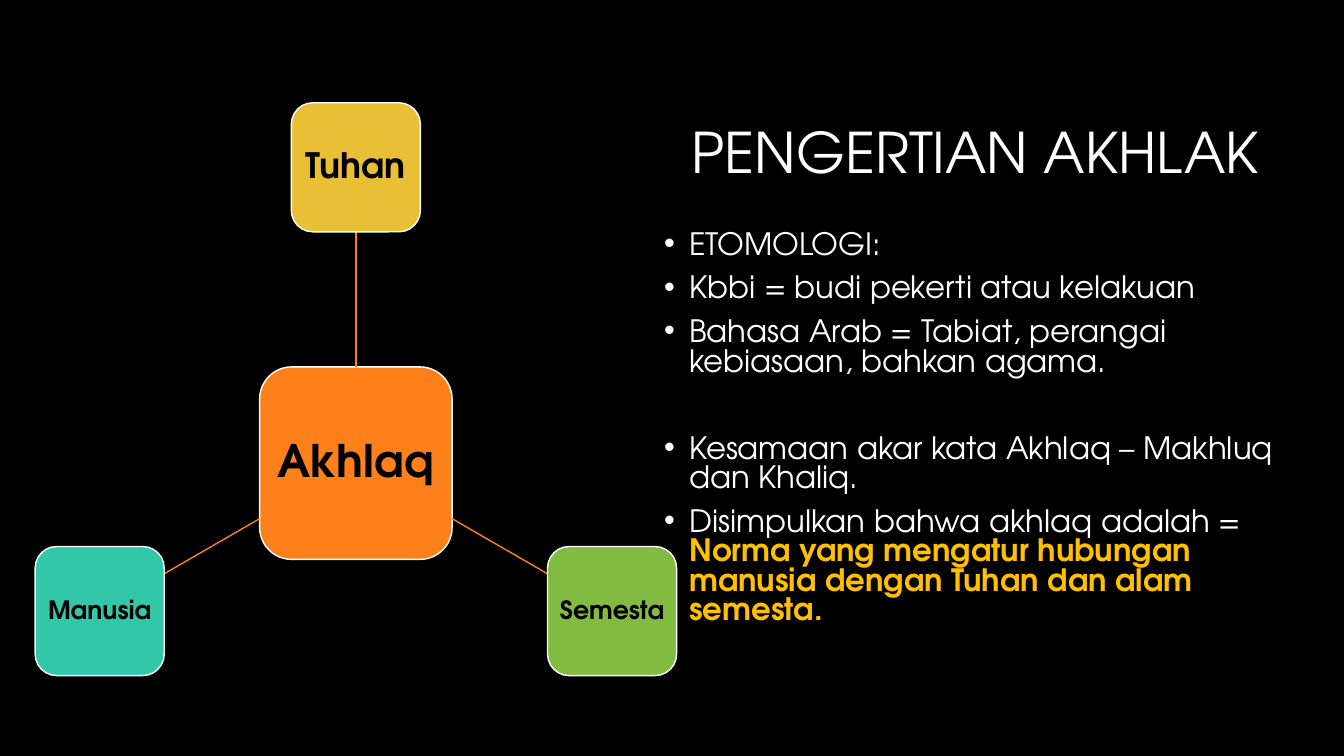
from math import cos, radians, sin

from lxml.etree import SubElement
from pptx import Presentation
from pptx.dml.color import RGBColor
from pptx.enum.shapes import MSO_CONNECTOR, MSO_SHAPE
from pptx.enum.text import MSO_ANCHOR, MSO_AUTO_SIZE, PP_ALIGN
from pptx.oxml.ns import qn
from pptx.util import Pt

BLACK = RGBColor(0x00, 0x00, 0x00)
WHITE = RGBColor(0xFF, 0xFF, 0xFF)
GOLD = RGBColor(0xFF, 0xC0, 0x00)
ORANGE = RGBColor(0xFE, 0x80, 0x1A)
YELLOW = RGBColor(0xE9, 0xBF, 0x35)
GREEN = RGBColor(0x81, 0xBB, 0x42)
TEAL = RGBColor(0x32, 0xC7, 0xA9)
FONT = "TeX Gyre Adventor"

TITLE = "PENGERTIAN AKHLAK"
POINTS = [
    ("ETOMOLOGI:", 0),
    ("Kbbi = budi pekerti atau kelakuan", 10),
    ("Bahasa Arab = Tabiat, perangai kebiasaan, bahkan agama.", 10),
    ("Kesamaan akar kata Akhlaq – Makhluq dan Khaliq.", 41),
    ("Disimpulkan bahwa akhlaq adalah =\v"
     "Norma yang mengatur hubungan manusia dengan Tuhan dan alam semesta.", 10),
]
HUB = ("Akhlaq", 32, ORANGE)
SATELLITES = [
    ("Tuhan", 25, YELLOW, -90),
    ("Semesta", 18, GREEN, 30),
    ("Manusia", 18, TEAL, 150),
]
HUB_X, HUB_Y = 254.2, 330.8
HUB_SIZE, SATELLITE_SIZE, ORBIT = 137.5, 92.2, 211.3


def style(font, size, color, bold=False):
    font.name = FONT
    font.size = Pt(size)
    font.color.rgb = color
    font.bold = bold


def add_tile(page, label, text_size, color, x, y, size):
    tile = page.shapes.add_shape(
        MSO_SHAPE.ROUNDED_RECTANGLE,
        Pt(x - size / 2), Pt(y - size / 2), Pt(size), Pt(size))
    tile.shadow.inherit = False
    tile.fill.solid()
    tile.fill.fore_color.rgb = color
    tile.line.color.rgb = WHITE
    tile.line.width = Pt(1)
    frame = tile.text_frame
    frame.word_wrap = False
    frame.margin_left = frame.margin_right = Pt(0)
    frame.vertical_anchor = MSO_ANCHOR.MIDDLE
    frame.text = label
    para = frame.paragraphs[0]
    para.alignment = PP_ALIGN.CENTER
    para.line_spacing = 0.9
    style(para.runs[0].font, text_size, BLACK, True)


def add_spoke(page, angle):
    dx, dy = cos(radians(angle)), sin(radians(angle))
    reach = 1 / max(abs(dx), abs(dy))
    start = HUB_SIZE / 2 * reach
    end = ORBIT - SATELLITE_SIZE / 2 * reach
    spoke = page.shapes.add_connector(
        MSO_CONNECTOR.STRAIGHT,
        Pt(HUB_X + start * dx), Pt(HUB_Y + start * dy),
        Pt(HUB_X + end * dx), Pt(HUB_Y + end * dy))
    spoke.line.color.rgb = ORANGE
    spoke.line.width = Pt(1)
    SubElement(spoke.element.spPr, qn("a:effectLst"))


def add_title(page):
    title = page.shapes.title
    title.left, title.top = Pt(228.2), Pt(60.5)
    title.width, title.height = Pt(678.2), Pt(101.5)
    frame = title.text_frame
    frame.text = TITLE
    frame.auto_size = MSO_AUTO_SIZE.NONE
    frame.vertical_anchor = MSO_ANCHOR.MIDDLE
    para = frame.paragraphs[0]
    para.alignment = PP_ALIGN.RIGHT
    para.line_spacing = 0.9
    style(para.runs[0].font, 40, WHITE)


def add_points(page):
    box = page.shapes.add_textbox(Pt(467.3), Pt(162), Pt(465.8), Pt(316.8))
    frame = box.text_frame
    frame.word_wrap = True
    for index, (text, space) in enumerate(POINTS):
        para = frame.add_paragraph() if index else frame.paragraphs[0]
        para.text = text
        para.line_spacing = 0.8
        para.space_before = Pt(space)
        props = para._p.get_or_add_pPr()
        props.set("marL", str(Pt(18)))
        props.set("indent", str(-Pt(18)))
        SubElement(props, qn("a:buFont"), typeface="Arial")
        SubElement(props, qn("a:buChar"), char="•")
        for span in para.runs:
            style(span.font, 22, WHITE)
    style(para.runs[-1].font, 22, GOLD, True)


def main():
    deck = Presentation()
    deck.slide_width, deck.slide_height = Pt(960), Pt(540)
    page = deck.slides.add_slide(deck.slide_layouts[5])
    page.background.fill.solid()
    page.background.fill.fore_color.rgb = BLACK
    add_title(page)
    add_points(page)
    add_tile(page, *HUB, HUB_X, HUB_Y, HUB_SIZE)
    for label, text_size, color, angle in SATELLITES:
        add_spoke(page, angle)
        x = HUB_X + ORBIT * cos(radians(angle))
        y = HUB_Y + ORBIT * sin(radians(angle))
        add_tile(page, label, text_size, color, x, y, SATELLITE_SIZE)
    deck.save("out.pptx")


if __name__ == "__main__":
    main()
